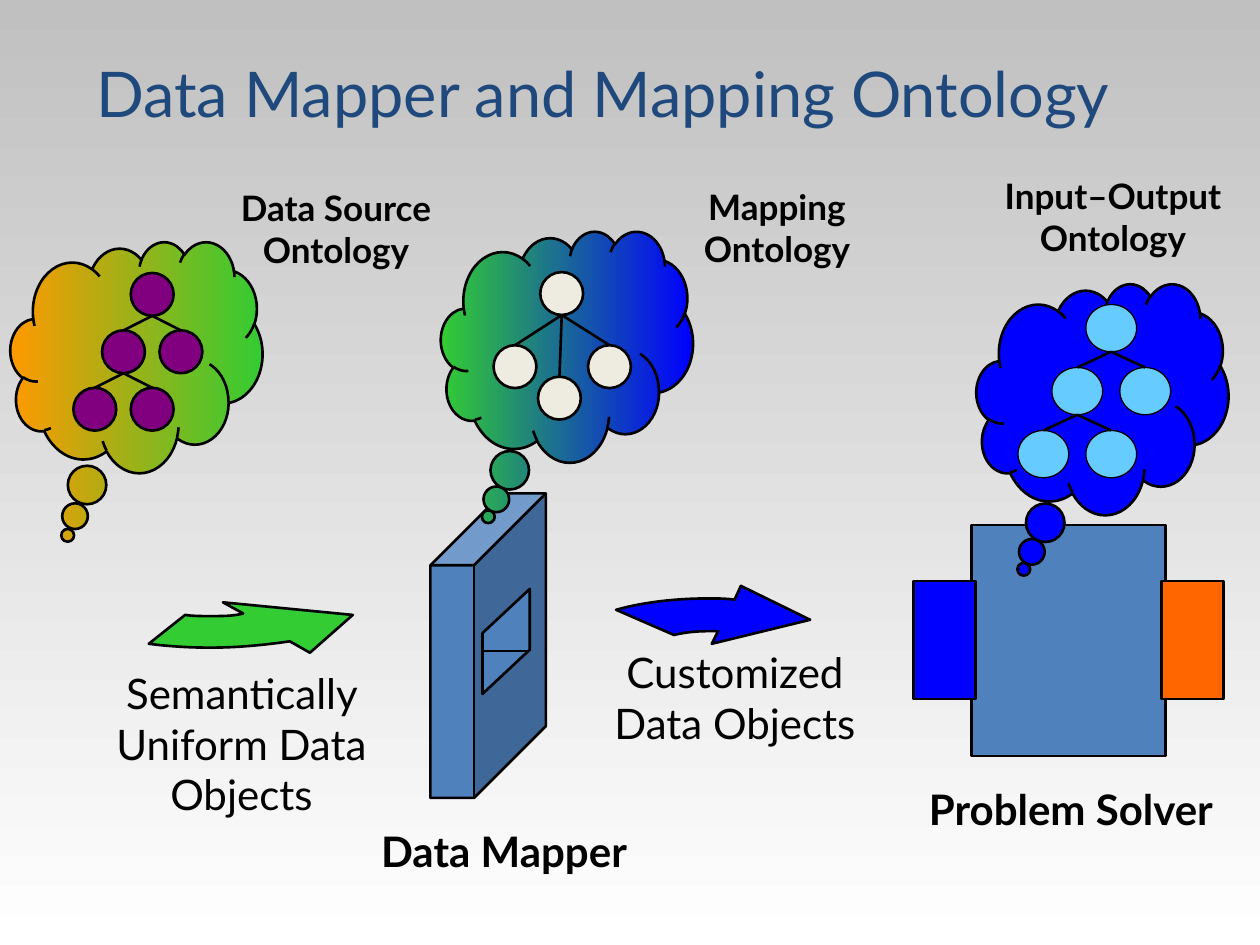
from lxml import etree
from pptx import Presentation
from pptx.dml.color import RGBColor
from pptx.enum.shapes import MSO_CONNECTOR, MSO_SHAPE as Preset
from pptx.enum.text import MSO_ANCHOR, PP_ALIGN
from pptx.oxml.ns import qn
from pptx.util import Pt

FONT = "Lato"
BLACK = RGBColor(0x00, 0x00, 0x00)
WHITE = RGBColor(0xFF, 0xFF, 0xFF)
SILVER = RGBColor(0xC0, 0xC0, 0xC0)
NAVY = RGBColor(0x1F, 0x49, 0x7D)
STEEL = RGBColor(0x4F, 0x81, 0xBD)
GREEN = RGBColor(0x33, 0xCC, 0x33)
BLUE = RGBColor(0x00, 0x00, 0xFF)
AMBER = RGBColor(0xFF, 0x99, 0x00)
ORANGE = RGBColor(0xFF, 0x66, 0x00)
PURPLE = RGBColor(0x80, 0x00, 0x80)
CREAM = RGBColor(0xEE, 0xEC, 0xE1)
SKY = RGBColor(0x66, 0xCC, 0xFF)

# Outlines in points: a pair is a corner, three pairs are a Bezier curve
SOURCE_ARROW = [
    (139, 350.6), ((133.2, 352.1), (126.7, 352.1), (120.2, 352.1)),
    ((115.2, 352.1), (110.2, 352.1), (105.8, 351.4)), (85, 367.9),
    ((96.5, 369.4), (108, 370.1), (120.2, 370.1)),
    ((136.1, 370.1), (151.2, 368.6), (165.6, 366.5)),
    (177.1, 373), (201.6, 351.4), (127.4, 344.2)]
TARGET_ARROW = [
    (410.4, 360.7), ((409, 360.7), (406.8, 360.7), (404.6, 360.7)),
    ((398.2, 360.7), (391, 361.4), (385.2, 362.9)), (352.1, 348.5),
    ((367.2, 344.2), (385.9, 342), (404.6, 342)),
    ((409.7, 342), (414.7, 342), (419.8, 342.7)),
    (423.4, 334.8), (463, 354.2), (406.8, 367.9)]


def paint(fill, colors, angle=0):
    """Solid fill for one colour, linear gradient for two."""
    if len(colors) == 1:
        fill.solid()
        fill.fore_color.rgb = colors[0]
        return
    fill.gradient()
    fill.gradient_angle = angle
    for stop, color in zip(fill.gradient_stops, colors):
        stop.color.rgb = color


def style(shape, *colors, width=1.5):
    shape.shadow.inherit = False
    paint(shape.fill, colors)
    shape.line.color.rgb = BLACK
    shape.line.width = Pt(width)


def add_preset(shapes, preset, box, *colors, adjust=(), width=1.5):
    shape = shapes.add_shape(preset, *map(Pt, box))
    for i, value in enumerate(adjust):
        shape.adjustments[i] = value
    style(shape, *colors, width=width)
    return shape


def add_line(shapes, start, end):
    line = shapes.add_connector(MSO_CONNECTOR.STRAIGHT, *map(Pt, start + end))
    line.line.color.rgb = BLACK
    line.line.width = Pt(1.5)
    etree.SubElement(line._element.spPr, qn("a:effectLst"))


def add_curved_arrow(shapes, outline, color, steps=12):
    points = [outline[0]]
    for part in outline[1:]:
        if not isinstance(part[0], tuple):
            points.append(part)
            continue
        controls = (points[-1],) + part
        for i in range(1, steps + 1):
            t = i / steps
            weights = ((1 - t) ** 3, 3 * t * (1 - t) ** 2,
                       3 * t ** 2 * (1 - t), t ** 3)
            points.append(tuple(sum(w * c[axis] for w, c in zip(weights, controls))
                                for axis in (0, 1)))
    corners = [(Pt(x), Pt(y)) for x, y in points]
    builder = shapes.build_freeform(*corners[0])
    builder.add_line_segments(corners[1:], close=True)
    style(builder.convert_to_shape(), color)


def add_label(shapes, text, box, size, bold=False, color=BLACK,
              align=PP_ALIGN.CENTER, anchor=MSO_ANCHOR.TOP):
    frame = shapes.add_textbox(*map(Pt, box)).text_frame
    frame.word_wrap = True
    frame.vertical_anchor = anchor
    paragraph = frame.paragraphs[0]
    paragraph.text = text
    paragraph.alignment = align
    font = paragraph.font
    font.name, font.size, font.bold = FONT, Pt(size), bold
    font.color.rgb = color


def add_thought(shapes, left, top, tail, *colors):
    add_preset(shapes, Preset.CLOUD_CALLOUT, (left, top, 144, 132), *colors,
               adjust=tail)


def add_tree(shapes, nodes, edges, size, color, width=1.5):
    """Nodes are given by their top centre; edges run from bottom to top."""
    tree = shapes.add_group_shape().shapes
    w, h = size
    for x, y in nodes:
        add_preset(tree, Preset.OVAL, (x - w / 2, y, w, h), color, width=width)
    for parent, child in edges:
        x, y = nodes[parent]
        add_line(tree, (x, y + h), nodes[child])


def add_binary_tree(shapes, root, step, size, color, width=1.5):
    grid = [(0, 0), (-1, 1), (1, 1), (-2, 2), (0, 2)]
    nodes = [(root[0] + col * step[0], root[1] + row * step[1])
             for col, row in grid]
    add_tree(shapes, nodes, [(0, 1), (0, 2), (1, 3), (1, 4)], size, color, width)


def add_data_mapper(shapes):
    add_preset(shapes, Preset.CUBE, (246, 282, 66, 174), STEEL, adjust=[0.622])
    window = add_preset(shapes, Preset.PARALLELOGRAM, (259.2, 353, 60, 27),
                        STEEL, adjust=[0.935])
    window.rotation = 270
    window._element.spPr.xfrm.set("flipH", "1")
    add_line(shapes, (302, 372), (276, 372))


def add_problem_solver(shapes):
    solver = shapes.add_group_shape().shapes
    add_preset(solver, Preset.CROSS, (522, 300, 177, 132), STEEL, adjust=[0.25])
    for left, color in ((522, BLUE), (663.7, ORANGE)):
        add_preset(solver, Preset.RECTANGLE, (left, 332, 35.3, 67.5), color)


def main():
    prs = Presentation()
    prs.slide_width, prs.slide_height = Pt(720), Pt(540)
    slide = prs.slides.add_slide(prs.slide_layouts[6])
    paint(slide.background.fill, (SILVER, WHITE), angle=270)
    shapes = slide.shapes

    # Data mapper with its mapping ontology
    add_curved_arrow(shapes, SOURCE_ARROW, GREEN)
    add_data_mapper(shapes)
    add_thought(shapes, 252, 132, (-0.312, 0.737), GREEN, BLUE)
    add_tree(shapes, [(321, 155.5), (294.3, 197.3), (348.3, 197.3), (319.7, 215.3)],
             [(0, 1), (0, 2), (0, 3)], (24.5, 24.5), CREAM)
    add_curved_arrow(shapes, TARGET_ARROW, BLUE)

    # Data source ontology
    add_thought(shapes, 6, 138, (-0.273, 0.772), AMBER, GREEN)
    add_binary_tree(shapes, (87, 156), (16.4, 32.8), (24.5, 24.5), PURPLE)

    # Problem solver with its input–output ontology
    add_problem_solver(shapes)
    add_thought(shapes, 558, 162, (-0.312, 0.737), BLUE)
    add_binary_tree(shapes, (635, 174), (19.4, 36), (29, 27), SKY, width=0.75)

    # Title and labels
    add_label(shapes, "Data Mapper and Mapping Ontology", (48, 24, 612, 54), 36,
              color=NAVY, align=PP_ALIGN.LEFT, anchor=MSO_ANCHOR.BOTTOM)
    for text, box in (("Data Source Ontology", (102, 103, 180, 55.5)),
                      ("Mapping Ontology", (358, 102.5, 172, 55.5)),
                      ("Input–Output Ontology", (552, 96, 168, 55.5))):
        add_label(shapes, text, box, 20, bold=True)
    for text, box, bold in (
            ("Semantically Uniform Data Objects", (48, 378, 180, 94), False),
            ("Customized Data Objects", (330, 366, 180, 65.5), False),
            ("Data Mapper", (198, 468, 180, 36), True),
            ("Problem Solver", (522, 444, 180, 65.5), True)):
        add_label(shapes, text, box, 24, bold=bold)

    prs.save("out.pptx")


if __name__ == "__main__":
    main()
